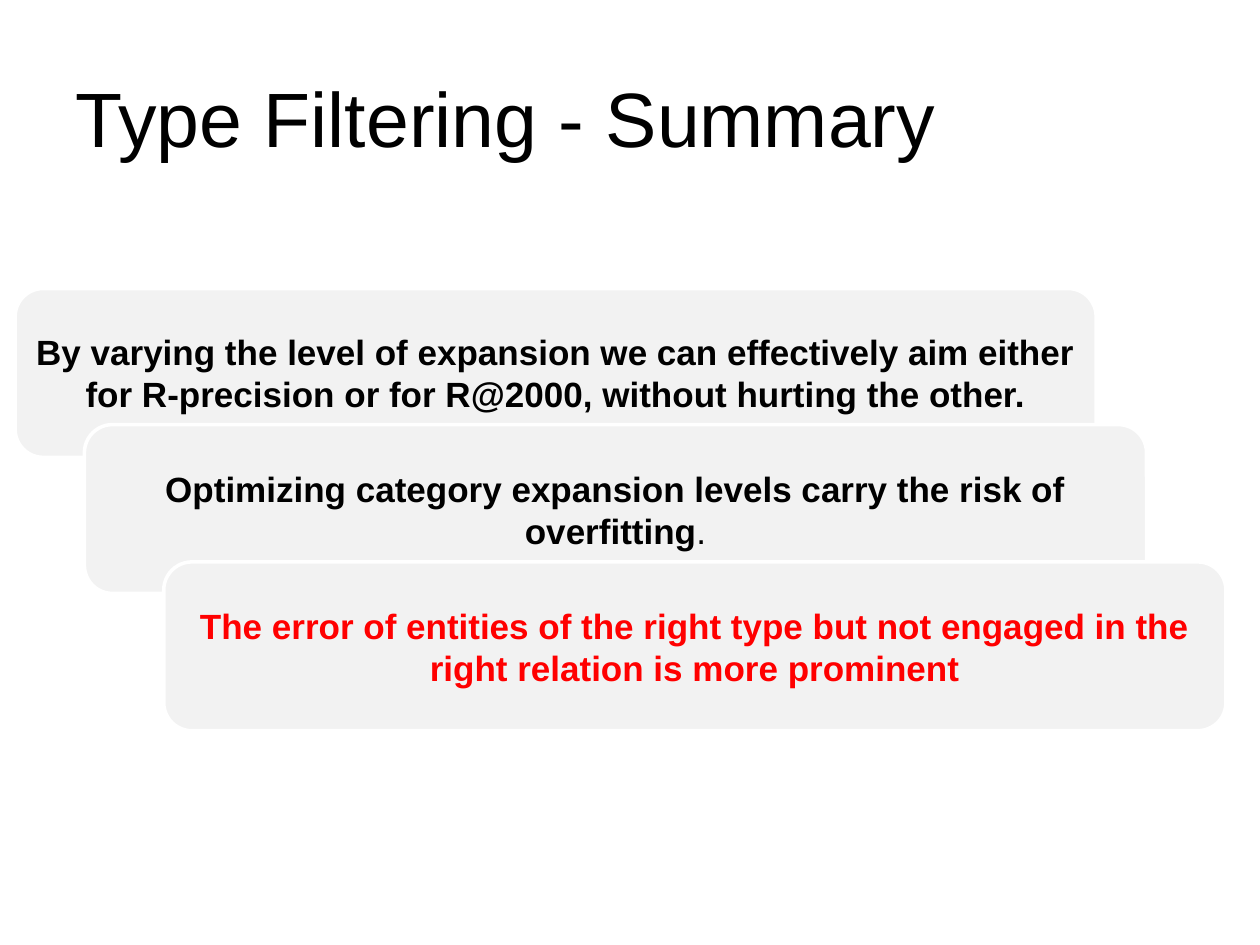
import dataclasses

import pptx
import pptx.dml.color
import pptx.enum.shapes
import pptx.enum.text
import pptx.util

Inches = pptx.util.Inches
Color = pptx.dml.color.RGBColor
Align = pptx.enum.text.PP_ALIGN
Anchor = pptx.enum.text.MSO_ANCHOR


@dataclasses.dataclass(frozen=True)
class Theme:
    font: str = "Arial"
    title_size: int = 44
    card_size: int = 20
    text: Color = Color(0, 0, 0)
    accent: Color = Color(255, 0, 0)
    card_fill: Color = Color(242, 242, 242)
    card_line: Color = Color(255, 255, 255)


@dataclasses.dataclass(frozen=True)
class Card:
    left: float
    top: float
    width: float
    text: str
    color: Color
    plain_ending: str = ""


THEME = Theme()
CARD_HEIGHT = 1.34
CARDS = [
    Card(0.12, 2.29, 8.58,
         "By varying the level of expansion we can effectively aim either "
         "for R-precision or for R@2000, without hurting the other.", THEME.text),
    Card(0.67, 3.37, 8.43,
         "Optimizing category expansion levels carry the risk of overfitting",
         THEME.text, plain_ending="."),
    Card(1.3, 4.46, 8.43,
         "The error of entities of the right type but not engaged in the "
         "right relation is more prominent", THEME.accent),
]


def add_text(para, text: str, *, size: int, color: Color, bold: bool = False) -> None:
    span = para.add_run()
    span.text = text
    span.font.name = THEME.font
    span.font.size = pptx.util.Pt(size)
    span.font.bold = bold
    span.font.color.rgb = color


def add_title(page, text: str) -> None:
    title = page.shapes.title
    title.left, title.top = Inches(0.5), Inches(0.3)
    title.width, title.height = Inches(9), Inches(1.25)
    title.text_frame.vertical_anchor = Anchor.MIDDLE
    para = title.text_frame.paragraphs[0]
    para.alignment = Align.LEFT
    add_text(para, text, size=THEME.title_size, color=THEME.text)


def add_card(page, card: Card) -> None:
    box = page.shapes.add_shape(
        pptx.enum.shapes.MSO_SHAPE.ROUNDED_RECTANGLE,
        Inches(card.left), Inches(card.top), Inches(card.width), Inches(CARD_HEIGHT))
    box.shadow.inherit = False
    box.fill.solid()
    box.fill.fore_color.rgb = THEME.card_fill
    box.line.color.rgb = THEME.card_line
    box.line.width = pptx.util.Pt(2)

    frame = box.text_frame
    frame.word_wrap = True
    frame.vertical_anchor = Anchor.MIDDLE
    frame.margin_left = frame.margin_right = Inches(0.08)
    para = frame.paragraphs[0]
    para.alignment = Align.CENTER
    add_text(para, card.text, size=THEME.card_size, color=card.color, bold=True)
    if card.plain_ending:
        add_text(para, card.plain_ending, size=THEME.card_size, color=card.color)


def main() -> None:
    deck = pptx.Presentation()
    deck.slide_width, deck.slide_height = Inches(10), Inches(7.5)
    page = deck.slides.add_slide(deck.slide_layouts[5])  # title only

    # Title
    add_title(page, "Type Filtering - Summary")

    # Overlapping cards, each in front of the one before
    for card in CARDS:
        add_card(page, card)

    deck.save("out.pptx")


if __name__ == "__main__":
    main()
